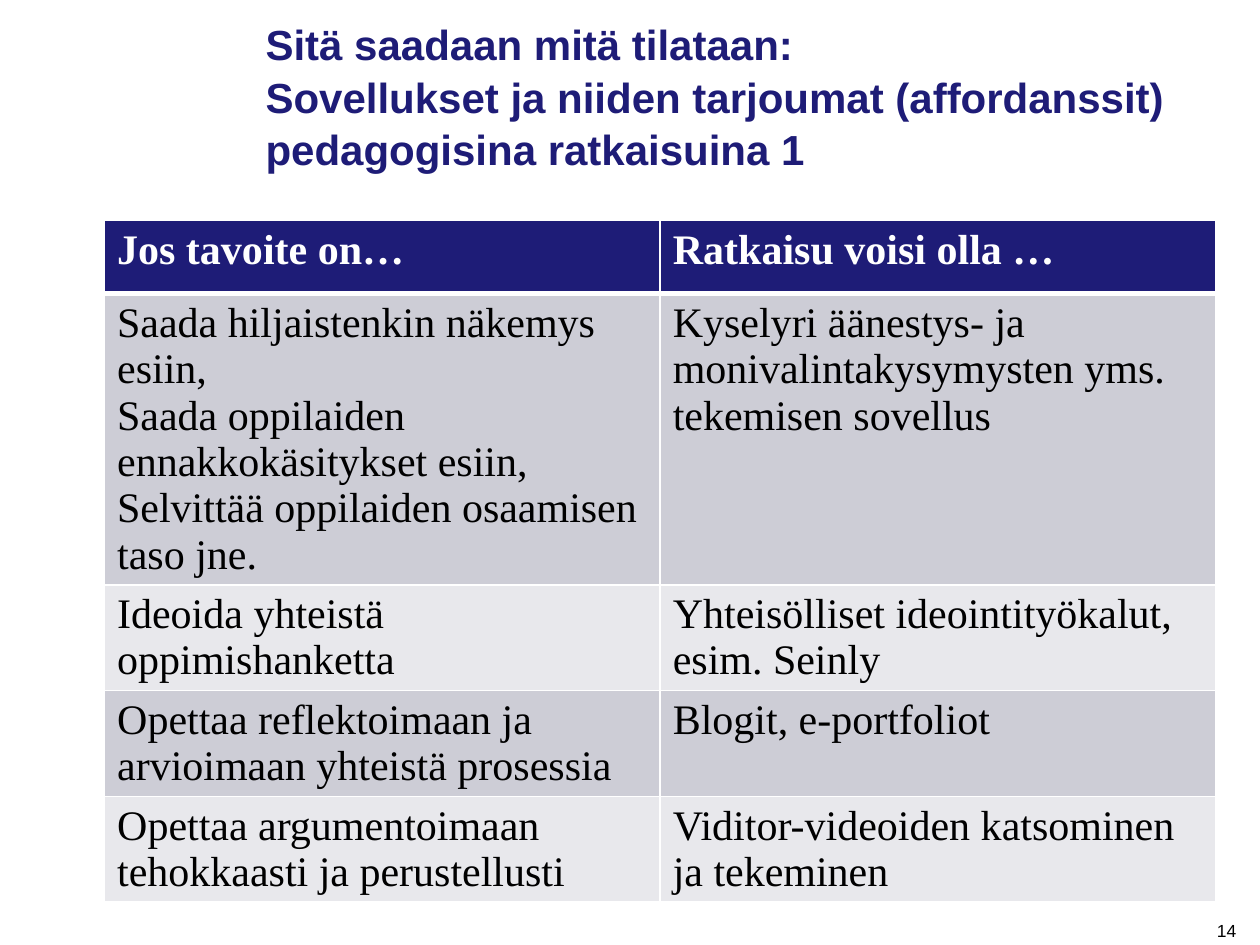
from typing import NamedTuple

from lxml import etree
from pptx import Presentation
from pptx import util as u
from pptx.dml.color import RGBColor
from pptx.enum import text
from pptx.oxml import ns

HUES = {"navy": "1E1C77", "white": "FFFFFF", "black": "000000",
        "odd": "CDCDD6", "even": "E8E8EC"}


class Label(NamedTuple):
    words: str
    box: tuple
    style: dict
    para: dict
    anchor: text.MSO_ANCHOR


class Row(NamedTuple):
    height: float
    cells: tuple


LABELS = (
    Label("Sitä saadaan mitä tilataan:\vSovellukset ja niiden tarjoumat "
          "(affordanssit) pedagogisina ratkaisuina 1",
          (2.01, 0.21, 7.67, 1.22),
          {"name": "Arial", "size": u.Pt(24), "bold": True, "hue": "navy"},
          {"line_spacing": u.Pt(30)}, text.MSO_ANCHOR.BOTTOM),
    Label("14", (7.83, 7.25, 2.08, 0.22),
          {"name": "Arial", "size": u.Pt(10), "hue": "black"},
          {"alignment": text.PP_ALIGN.RIGHT}, text.MSO_ANCHOR.TOP),
)
ROWS = (
    Row(0.58, ("Jos tavoite on…", "Ratkaisu voisi olla …")),
    Row(2.31, ("Saada hiljaistenkin näkemys esiin,\vSaada oppilaiden "
               "ennakkokäsitykset esiin,\nSelvittää oppilaiden osaamisen taso jne.",
               "Kyselyri äänestys- ja monivalintakysymysten yms. tekemisen sovellus")),
    Row(0.84, ("Ideoida yhteistä oppimishanketta",
               "Yhteisölliset ideointityökalut, esim. Seinly")),
    Row(0.84, ("Opettaa reflektoimaan ja arvioimaan yhteistä prosessia",
               "Blogit, e-portfoliot")),
    Row(0.84, ("Opettaa argumentoimaan tehokkaasti ja perustellusti",
               "Viditor-videoiden katsominen ja tekeminen")),
)


def color(hue: str) -> RGBColor:
    return RGBColor.from_string(HUES[hue])


def write(frame, words: str, style: dict, para: dict) -> None:
    frame.text = words
    for line in frame.paragraphs:
        for key, value in para.items():
            setattr(line, key, value)
        for run in line.runs:
            for key, value in style.items():
                if key == "hue":
                    run.font.color.rgb = color(value)
                else:
                    setattr(run.font, key, value)


def add_label(slide, label: Label) -> None:
    frame = slide.shapes.add_textbox(*map(u.Inches, label.box)).text_frame
    frame.word_wrap = True
    frame.vertical_anchor = label.anchor
    write(frame, label.words, label.style, label.para)


def edge(cell, top: int, base: int) -> None:
    props = cell._tc.get_or_add_tcPr()
    sides = {"lnL": 1, "lnR": 1, "lnT": top, "lnB": base}
    for spot, (side, width) in enumerate(sides.items()):
        line = etree.Element(ns.qn(f"a:{side}"), w=str(u.Pt(width)))
        fill = etree.SubElement(line, ns.qn("a:solidFill"))
        etree.SubElement(fill, ns.qn("a:srgbClr"), val=HUES["white"])
        props.insert(spot, line)


def add_grid(slide, rows: tuple) -> None:
    high = sum(row.height for row in rows)
    box = map(u.Inches, (0.83, 1.75, 8.82, high))
    grid = slide.shapes.add_table(len(rows), 2, *box).table
    for i, row in enumerate(rows):
        grid.rows[i].height = u.Inches(row.height)
        head = i == 0
        band = "navy" if head else "odd" if i % 2 else "even"
        style = {"name": "Times New Roman", "size": u.Pt(24), "bold": head,
                 "hue": "white" if head else "black"}
        for cell, words in zip(grid.rows[i].cells, row.cells):
            cell.fill.solid()
            cell.fill.fore_color.rgb = color(band)
            write(cell.text_frame, words, style, {})
            edge(cell, 3 if i == 1 else 1, 3 if head else 1)


def main() -> None:
    """Build the slide that pairs teaching goals with suitable tools."""
    deck = Presentation()
    deck.slide_width, deck.slide_height = u.Inches(10), u.Inches(7.5)
    slide = deck.slides.add_slide(deck.slide_layouts[6])
    add_grid(slide, ROWS)
    for label in LABELS:
        add_label(slide, label)
    deck.save("out.pptx")


if __name__ == "__main__":
    main()
